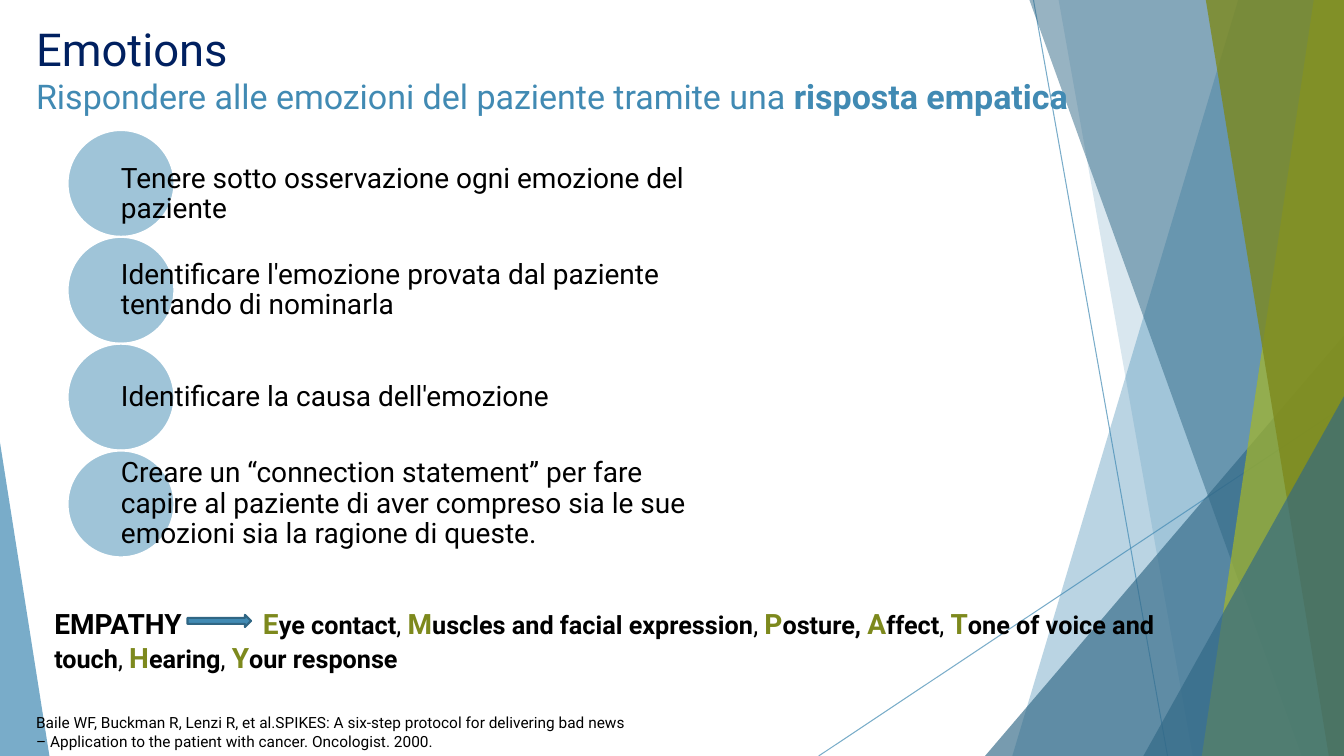
import lxml.etree
import pptx
import pptx.dml.color
import pptx.enum.shapes
import pptx.enum.text
import pptx.oxml.ns
import pptx.util

Inches = pptx.util.Inches
Pt = pptx.util.Pt
RGBColor = pptx.dml.color.RGBColor
Shape = pptx.enum.shapes.MSO_SHAPE
Anchor = pptx.enum.text.MSO_ANCHOR
qn = pptx.oxml.ns.qn

BLUE = RGBColor(0x41, 0x8A, 0xB3)
DEEP = RGBColor(0x31, 0x68, 0x86)
EDGE = RGBColor(0x30, 0x66, 0x84)
LIME = RGBColor(0xA6, 0xB7, 0x27)
MOSS = RGBColor(0x7D, 0x89, 0x1D)
NAVY = RGBColor(0x00, 0x20, 0x60)
BLACK = RGBColor(0, 0, 0)
WHITE = RGBColor(255, 255, 255)

HEAD = {"size": Pt(32.4), "bold": False}
LEAD = {"size": Pt(24.3), "bold": False}
STRONG = {"size": Pt(24.3), "bold": True}
STEP = {"size": Pt(20), "bold": False}
KEY = {"size": Pt(20), "bold": True}
WORD = {"size": Pt(18), "bold": True}
COMMA = {"size": Pt(18), "bold": False}
NOTE = {"size": Pt(11), "bold": False}

TIGHT = {"margin_left": 0, "margin_right": 0, "margin_top": Inches(0.03),
         "margin_bottom": Inches(0.03), "vertical_anchor": Anchor.MIDDLE}

STEPS = [
    "Tenere sotto osservazione ogni emozione del paziente",
    "Identificare l'emozione provata dal paziente tentando di nominarla",
    "Identificare la causa dell'emozione",
    "Creare un “connection statement” per fare capire al paziente di aver "
    "compreso sia le sue emozioni sia la ragione di queste.",
]
TRAITS = [
    ("Eye contact", ", "), ("Muscles and facial expression", ", "),
    ("Posture, ", ""), ("Affect", ", "), ("Tone of voice and touch", ", "),
    ("Hearing", ", "), ("Your response", ""),
]


def apply(item, style):
    for name, value in style.items():
        setattr(item, name, value)


def fade(shape, share):
    tint = shape._element.spPr.find(".//" + qn("a:srgbClr"))
    lxml.etree.SubElement(tint, qn("a:alpha")).set("val", str(share * 1000))


def paint(shape, fill, share=100, edge=None):
    shape.shadow.inherit = False
    shape.fill.solid()
    shape.fill.fore_color.rgb = fill
    if share < 100:
        fade(shape, share)
    if edge is None:
        shape.line.fill.background()
    else:
        shape.line.color.rgb = edge
        shape.line.width = Pt(1.5)


def write(par, text, style, ink=BLACK):
    run = par.add_run()
    run.text = text
    apply(run.font, {"name": "Roboto", **style})
    run.font.color.rgb = ink


def add_text(slide, box, style=None):
    frame = slide.shapes.add_textbox(*map(Inches, box)).text_frame
    apply(frame, {"word_wrap": True, **(style or {})})
    return frame.paragraphs[0]


def draw_line(slide, box, ends):
    x, y, w, h = box
    x1, y1, x2, y2 = ends
    line = slide.shapes.add_connector(
        pptx.enum.shapes.MSO_CONNECTOR.STRAIGHT,
        *map(Inches, (x + x1, y + y1, x + x2, y + y2)))
    line.line.color.rgb = BLUE
    line.line.width = Pt(0.75)
    fade(line, 70)
    lxml.etree.SubElement(line._element.spPr, qn("a:effectLst"))


def draw_band(slide, box, dims):
    x, y, w, h = box
    top, foot = dims
    spots = [(x + top, y), (x + w, y), (x + w, y + h), (x + foot, y + h)]
    spots = [(Inches(a), Inches(b)) for a, b in spots]
    path = slide.shapes.build_freeform(*spots[0])
    path.add_line_segments(spots[1:], close=True)
    return path.convert_to_shape()


def draw_peak(slide, box, dims):
    x, y, w, h = box
    left, width, height, tip = dims
    peak = slide.shapes.add_shape(
        Shape.ISOSCELES_TRIANGLE,
        *map(Inches, (x + left, y + h - height, width, height)))
    peak.adjustments[0] = tip
    return peak


def draw_back(slide, box):
    for ends in [(10.25, 0, 11.58, 7.5), (13.33, 4.03, 8.12, 7.5)]:
        draw_line(slide, box, ends)
    for draw, dims, fill, share in [
        (draw_band, (12.28, 10.04), BLUE, 36),
        (draw_band, (10.5, 11.83), BLUE, 20),
        (draw_peak, (9.77, 3.56, 4.17, 1), DEEP, 66),
        (draw_band, (10.21, 12.91), DEEP, 50),
        (draw_band, (13.03, 11.92), LIME, 70),
        (draw_band, (11.96, 13.18), MOSS, 80),
        (draw_peak, (11.34, 1.99, 3.57, 1), DEEP, 66),
        (draw_peak, (0, 0.49, 3.11, 0), BLUE, 70),
    ]:
        paint(draw(slide, box, dims), fill, share)


def add_head(slide, box):
    par = add_text(slide, box)
    write(par, "Emotions", HEAD, NAVY)
    par.add_line_break()
    write(par, "Rispondere alle emozioni del paziente tramite una ", LEAD, BLUE)
    write(par, "risposta empatica", STRONG, BLUE)


def add_steps(slide, box):
    x, y, w, h = box
    size = h / len(STEPS)
    for i, step in enumerate(STEPS):
        top = y + i * size
        disc = slide.shapes.add_shape(
            Shape.OVAL, *map(Inches, (x, top, size, size)))
        paint(disc, BLUE, 50, WHITE)
        drop = 0.11 if i == 0 else 0
        par = add_text(
            slide, (x + size / 2, top + drop, w - size / 2, size), TIGHT)
        par.line_spacing = 0.9
        write(par, step, STEP)


def add_traits(slide, box):
    x, y, w, h = box
    par = add_text(slide, box)
    tabs = lxml.etree.SubElement(par._p.get_or_add_pPr(), qn("a:tabLst"))
    stop = lxml.etree.SubElement(tabs, qn("a:tab"))
    stop.set("pos", str(Inches(2.07)))
    stop.set("algn", "l")
    write(par, "EMPATHY\t", KEY)
    for trait, mark in TRAITS:
        write(par, trait[0], KEY, MOSS)
        write(par, trait[1:], WORD)
        if mark:
            write(par, mark, COMMA)
    arrow = slide.shapes.add_shape(
        Shape.RIGHT_ARROW, *map(Inches, (x + 1.42, y + 0.13, 0.63, 0.12)))
    paint(arrow, BLUE, edge=EDGE)


def add_source(slide, box):
    write(add_text(slide, box),
          "Baile WF, Buckman R, Lenzi R, et al.SPIKES: A six-step protocol for "
          "delivering bad news – Application to the patient with cancer. "
          "Oncologist. 2000.", NOTE)


def main():
    deck = pptx.Presentation()
    apply(deck, {"slide_width": Inches(13.33), "slide_height": Inches(7.5)})
    slide = deck.slides.add_slide(deck.slide_layouts[6])
    draw_back(slide, (0, 0, 13.33, 7.5))
    add_head(slide, (0.26, 0.16, 10.87, 1.44))
    add_steps(slide, (0.67, 1.29, 6.19, 4.24))
    add_traits(slide, (0.44, 5.97, 11.67, 0.77))
    add_source(slide, (0.26, 7.03, 6.12, 0.47))
    deck.save("out.pptx")


if __name__ == "__main__":
    main()
